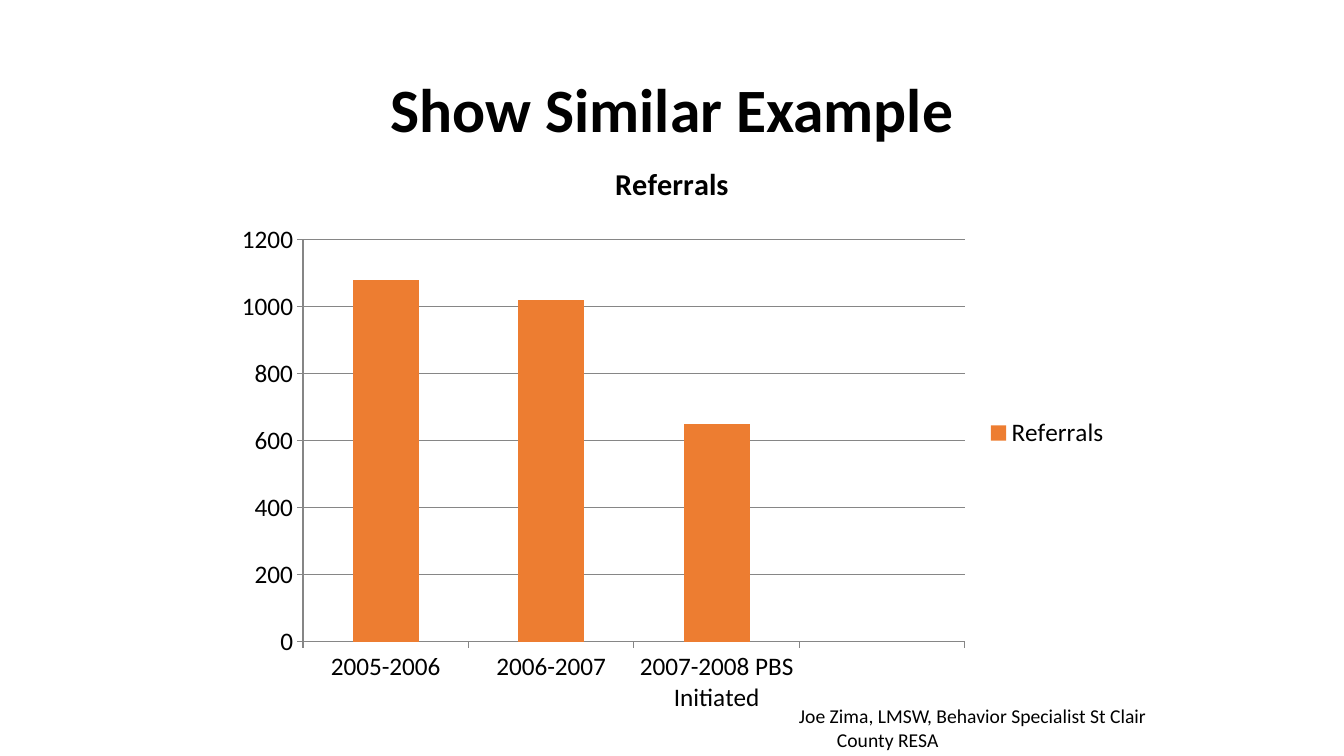
from lxml import etree
from pptx import Presentation
from pptx.chart.data import CategoryChartData
from pptx.dml.color import RGBColor
from pptx.enum.chart import XL_CHART_TYPE, XL_LEGEND_POSITION, XL_TICK_MARK
from pptx.enum.text import MSO_ANCHOR, PP_ALIGN
from pptx.oxml import parse_xml
from pptx.util import Emu, Pt

CHART_NS = "http://schemas.openxmlformats.org/drawingml/2006/chart"


def px(length):
    return Emu(round(length * 914400 / 100.8))


def style(font, size, bold=False, color="000000"):
    font.name = "Calibri"
    font.size = Pt(size)
    font.bold = bold
    font.color.rgb = RGBColor.from_string(color)


deck = Presentation()
deck.slide_width, deck.slide_height = px(1344), px(756)
page = deck.slides.add_slide(deck.slide_layouts[5])

title = page.shapes.title
title.left, title.top, title.width, title.height = px(93), px(40), px(1159), px(146)
title.text_frame.text = "Show Similar Example"
title.text_frame.vertical_anchor = MSO_ANCHOR.MIDDLE
para = title.text_frame.paragraphs[0]
para.alignment = PP_ALIGN.CENTER
para.line_spacing = 0.9
style(para.runs[0].font, 44, bold=True)

data = CategoryChartData()
data.categories = ["2005-2006", "2006-2007", "2007-2008 PBS Initiated", ""]
data.add_series("Referrals", [1080, 1020, 650, None])
chart = page.shapes.add_chart(
    XL_CHART_TYPE.COLUMN_CLUSTERED, px(224), px(140), px(896), px(586), data
).chart
style(chart.font, 18)

chart.has_title = True
chart.chart_title.text_frame.text = "Referrals"
style(chart.chart_title.text_frame.paragraphs[0].runs[0].font, 21.6, bold=True)
chart.chart_title.include_in_layout = False

chart.has_legend = True
chart.legend.position = XL_LEGEND_POSITION.RIGHT
chart.legend.include_in_layout = False

plot = chart.plots[0]
plot.gap_width = 150
plot.vary_by_categories = False
bars = plot.series[0].format.fill
bars.solid()
bars.fore_color.rgb = RGBColor.from_string("ED7D31")

value_axis = chart.value_axis
value_axis.minimum_scale, value_axis.maximum_scale = 0, 1200
value_axis.major_unit = 200
value_axis.has_major_gridlines = True
for axis in (chart.category_axis, value_axis):
    axis.major_tick_mark = XL_TICK_MARK.OUTSIDE
    axis.minor_tick_mark = XL_TICK_MARK.NONE
for line in (
    chart.category_axis.format.line,
    value_axis.format.line,
    value_axis.major_gridlines.format.line,
):
    line.color.rgb = RGBColor.from_string("868686")
    line.width = Pt(0.75)

plot_area = chart.element.find(f".//{{{CHART_NS}}}plotArea")
for old_layout in plot_area.findall(f"{{{CHART_NS}}}layout"):
    plot_area.remove(old_layout)
layout = parse_xml(f'<c:layout xmlns:c="{CHART_NS}"><c:manualLayout/></c:layout>')
settings = {
    "layoutTarget": "inner", "xMode": "edge", "yMode": "edge",
    "x": 79 / 896, "y": 100 / 586, "w": 662 / 896, "h": 402 / 586,
}
for name, value in settings.items():
    etree.SubElement(layout[0], f"{{{CHART_NS}}}{name}").set("val", str(value))
plot_area.insert(0, layout)

credit = page.shapes.add_textbox(px(789), px(699), px(386), px(57))
credit.text_frame.word_wrap = True
credit.text_frame.text = "Joe Zima, LMSW, Behavior Specialist St Clair County RESA"
para = credit.text_frame.paragraphs[0]
indent = para._p.get_or_add_pPr()
indent.set("marL", str(px(38)))
indent.set("indent", str(-px(38)))
style(para.runs[0].font, 14)

deck.save("out.pptx")
